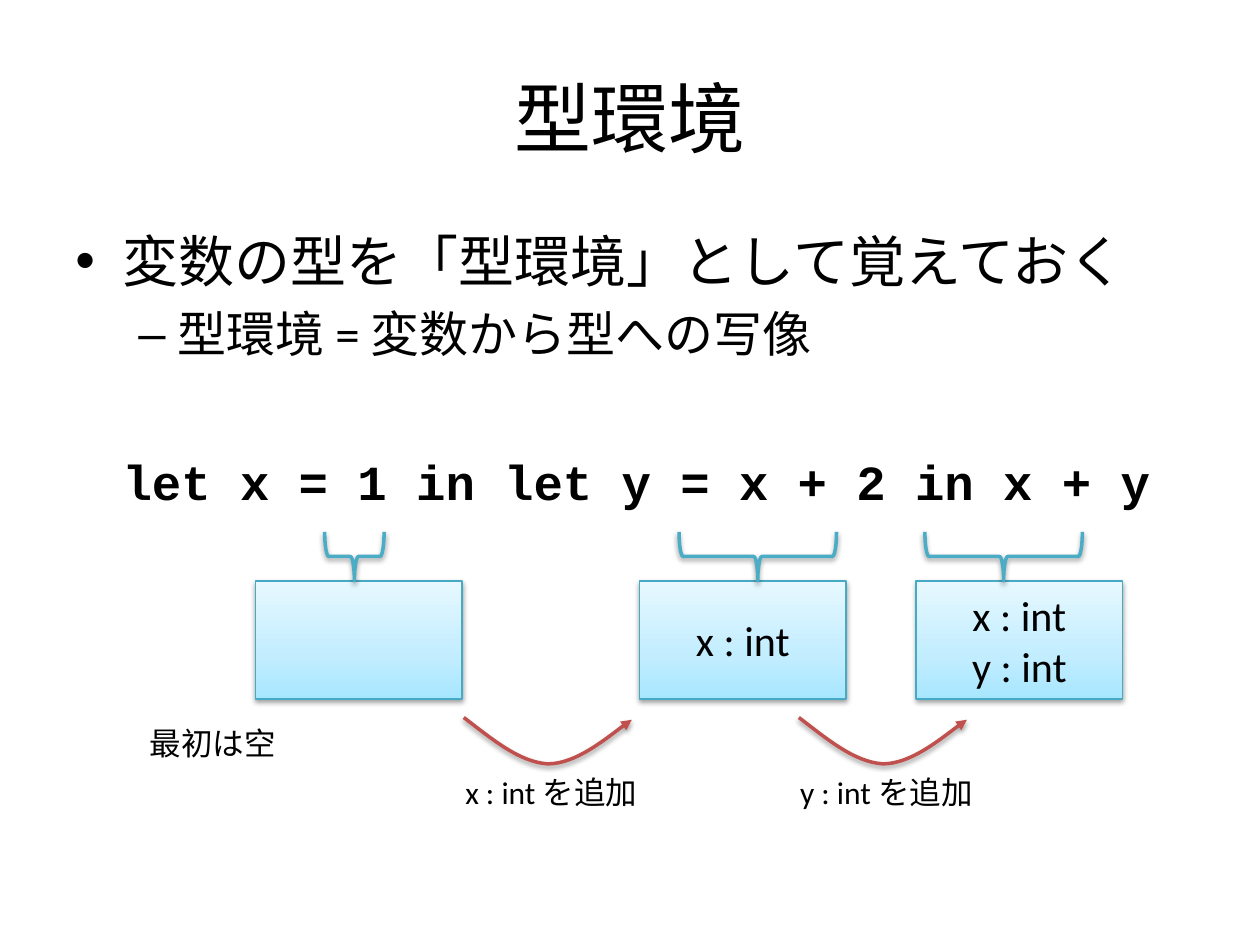
from dataclasses import dataclass

from lxml import etree
from pptx import Presentation
from pptx.dml.color import RGBColor
from pptx.enum.shapes import MSO_SHAPE
from pptx.enum.text import MSO_ANCHOR, PP_ALIGN
from pptx.oxml.ns import qn
from pptx.util import Pt

RECTANGLE, BRACE = MSO_SHAPE.RECTANGLE, MSO_SHAPE.RIGHT_BRACE
TOP, MIDDLE = MSO_ANCHOR.TOP, MSO_ANCHOR.MIDDLE
LEFT, CENTER = PP_ALIGN.LEFT, PP_ALIGN.CENTER


@dataclass(frozen=True)
class Theme:
    font: str = "Calibri"
    code_font: str = "Courier New"
    text: str = "000000"
    brace: str = "4BACC6"
    box_line: str = "46AAC5"
    arrow: str = "C0504D"
    gradient: tuple = ((0, "A7E6FF"), (35, "C1EDFF"), (100, "E7F8FF"))
    title_size: float = 44
    bullet_size: float = 32
    code_size: float = 28
    box_size: float = 24
    label_size: float = 18


THEME = Theme()

# Arrow curve as fractions of its box: start, then two cubic segments
CURVE = [(0, 0), (0.17, 0.47), (0.33, 0.96), (0.5, 1), (0.67, 1), (0.92, 0.24), (1, 0.05)]


def sub(parent, tag, **attributes):
    element = etree.SubElement(parent, qn(tag))
    for name, value in attributes.items():
        element.set(name, str(value))
    return element


def write(paragraph, text, size, align=LEFT, **formats):
    paragraph.alignment = align
    run = paragraph.add_run()
    run.text = text
    values = {"name": THEME.font, "size": Pt(size), "bold": False} | formats
    for name, value in values.items():
        setattr(run.font, name, value)
    run.font.color.rgb = RGBColor.from_string(THEME.text)


def set_indent(paragraph, margin, indent, bullet=None):
    properties = paragraph._p.get_or_add_pPr()
    properties.set("marL", str(Pt(margin)))
    properties.set("indent", str(Pt(indent)))
    if bullet:
        sub(properties, "a:buFont", typeface="Arial")
        sub(properties, "a:buChar", char=bullet)


def add_text_frame(slide, box, anchor=TOP, wrap=True):
    frame = slide.shapes.add_textbox(*map(Pt, box)).text_frame
    frame.word_wrap = wrap
    frame.vertical_anchor = anchor
    return frame


def set_outline(shape, color, width):
    """Outline with a soft shadow straight below."""
    shape.line.color.rgb = RGBColor.from_string(color)
    shape.line.width = Pt(width)
    shape.shadow.inherit = False
    effects = shape._element.spPr.find(qn("a:effectLst"))
    shadow = sub(effects, "a:outerShdw", blurRad=Pt(3.1), dist=Pt(1.6), dir=5400000, rotWithShape=0)
    sub(sub(shadow, "a:srgbClr", val=THEME.text), "a:alpha", val=38000)


def add_title(slide, box, text):
    frame = add_text_frame(slide, box, MIDDLE)
    write(frame.paragraphs[0], text, THEME.title_size, CENTER)


def add_body(slide, box):
    frame = add_text_frame(slide, box)
    main = frame.paragraphs[0]
    write(main, "変数の型を「型環境」として覚えておく", THEME.bullet_size)
    set_indent(main, 27, -27, "•")

    detail = frame.add_paragraph()
    detail.level = 1
    detail.space_before = Pt(5.6)
    write(detail, "型環境 = 変数から型への写像", THEME.code_size)
    set_indent(detail, 58.5, -22.5, "–")

    code = frame.add_paragraph()
    code.space_before = Pt(51)
    write(code, "let x = 1 in let y = x + 2 in x + y", THEME.code_size,
          name=THEME.code_font, bold=True)
    set_indent(code, 27, 0)


def add_environment(slide, box, bindings):
    """Box that lists the bindings of one type environment."""
    shape = slide.shapes.add_shape(RECTANGLE, *map(Pt, box))
    shape.fill.gradient()
    shape.fill.gradient_angle = 90
    stops = shape._element.spPr.find(qn("a:gradFill")).find(qn("a:gsLst"))
    for stop in list(stops):
        stops.remove(stop)
    for position, color in THEME.gradient:
        sub(sub(stops, "a:gs", pos=position * 1000), "a:srgbClr", val=color)
    set_outline(shape, THEME.box_line, 0.75)

    frame = shape.text_frame
    frame.vertical_anchor = MIDDLE
    for index, binding in enumerate(bindings):
        paragraph = frame.add_paragraph() if index else frame.paragraphs[0]
        write(paragraph, binding, THEME.box_size, CENTER)


def add_brace(slide, box):
    """Brace opening upward: a right brace turned by 90 degrees inside the box."""
    left, top, width, height = box
    turned = (left + (width - height) / 2, top + (height - width) / 2, height, width)
    shape = slide.shapes.add_shape(BRACE, *map(Pt, turned))
    shape.rotation = 90
    shape.fill.background()
    set_outline(shape, THEME.brace, 2)


def add_curved_arrow(slide, box):
    left, top, width, height = box
    points = [(Pt(left + x * width), Pt(top + y * height)) for x, y in CURVE]
    builder = slide.shapes.build_freeform(*points[0])
    builder.add_line_segments(points[1:], close=False)
    shape = builder.convert_to_shape()
    shape.fill.background()
    set_outline(shape, THEME.arrow, 2)
    sub(shape.line._get_or_add_ln(), "a:tailEnd", type="triangle")

    # Every three line segments become one cubic curve
    segments = list(shape._element.spPr.iter(qn("a:lnTo")))
    outline = segments[0].getparent()
    for start in range(0, len(segments), 3):
        curve = sub(outline, "a:cubicBezTo")
        for segment in segments[start:start + 3]:
            curve.append(segment[0])
            outline.remove(segment)


def add_label(slide, box, text, align=CENTER):
    frame = add_text_frame(slide, box)
    write(frame.paragraphs[0], text, THEME.label_size, align)


def add_diagram(slide, box):
    left, top, width, height = box
    brace_height, box_width, box_height = 28, 118, 67.5
    box_top = top + brace_height
    arrow_top = box_top + box_height + 10.5

    # Environments: box offset, brace centre, brace width, bindings
    environments = [
        (377.5, 427.5, 90, ["x : int", "y : int"]),
        (219.5, 287, 90, ["x : int"]),
        (0, 56.5, 34, []),
    ]
    for offset, center, span, bindings in environments:
        add_environment(slide, (left + offset, box_top, box_width, box_height), bindings)
        add_brace(slide, (left + center - span / 2, top, span, brace_height))

    # Additions between neighbouring environments
    for offset, text in [(119, "x : int を追加"), (310.5, "y : int を追加")]:
        add_curved_arrow(slide, (left + offset, arrow_top, 96, 26.5))
        add_label(slide, (left + offset - 29, arrow_top + 28, 158, 29), text)

    add_label(slide, (left - 67.5, arrow_top, 130, 29), "最初は空", LEFT)


def main():
    presentation = Presentation()
    presentation.slide_width, presentation.slide_height = Pt(720), Pt(540)
    slide = presentation.slides.add_slide(presentation.slide_layouts[6])
    add_title(slide, (36, 21.6, 648, 90), "型環境")
    add_body(slide, (36, 126, 648, 356.4))
    add_diagram(slide, (146, 304, 495.5, 164))
    presentation.save("out.pptx")


if __name__ == "__main__":
    main()
